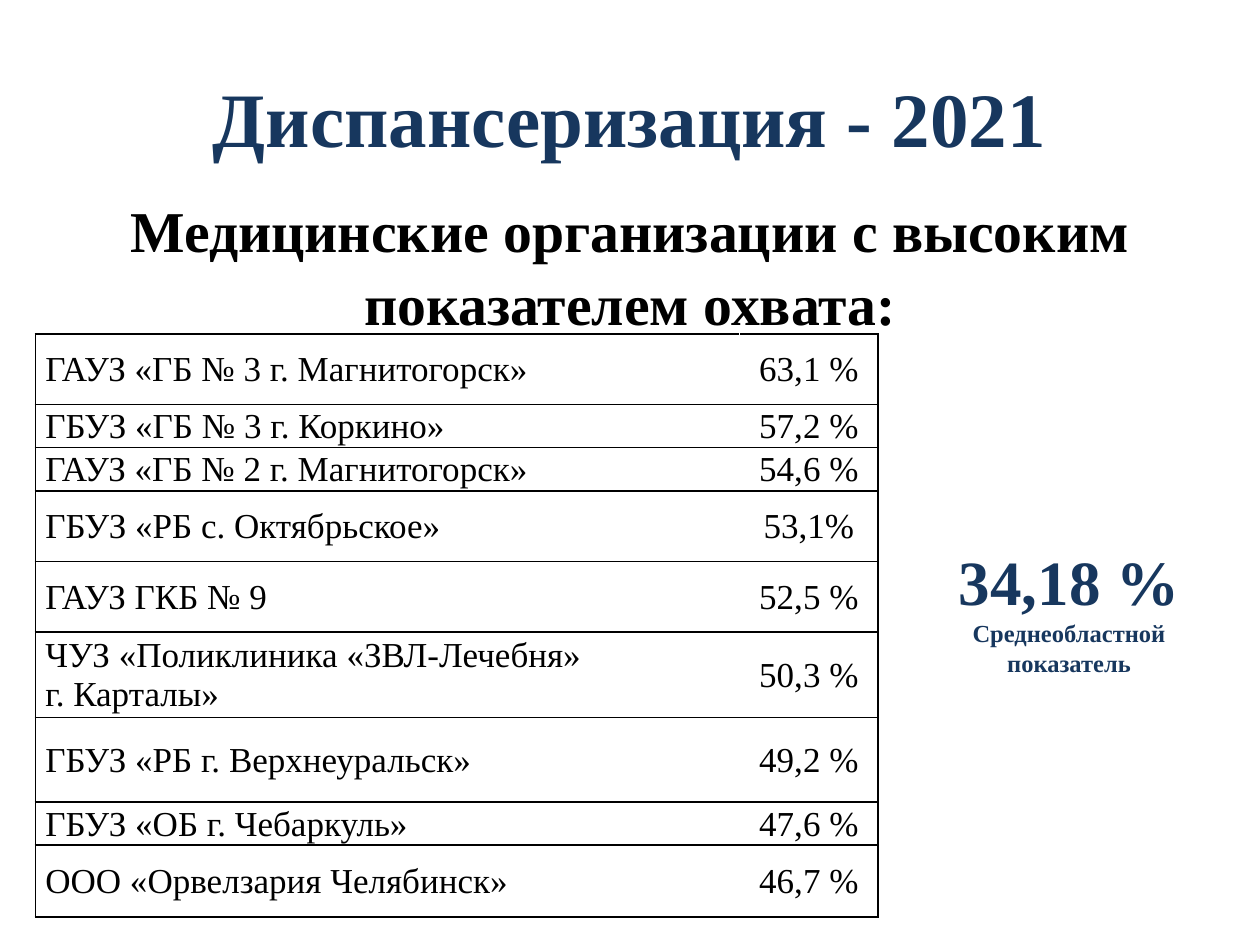
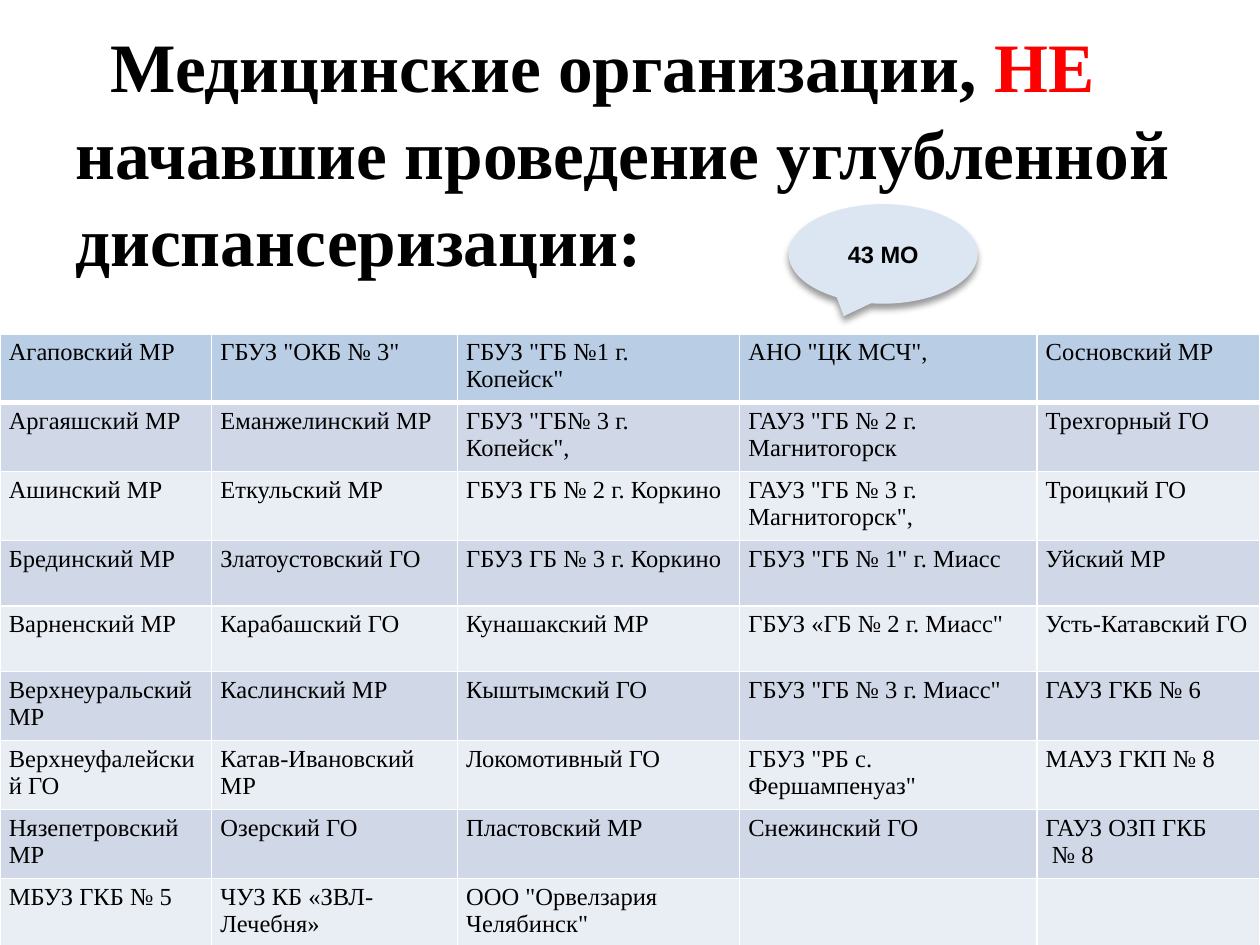
from lxml import etree
from pptx import Presentation, util as u
from pptx.dml.color import RGBColor
from pptx.enum import shapes, text
from pptx.oxml import parse_xml

WIDTH, HEIGHT = 10, 7.5
MARGIN = 0.05 * WIDTH
TABLE_TOP = 2.65
NAVY, BLACK, WHITE, RED = "17375E", "000000", "FFFFFF", "FF0000"
HEADER, BAND_DARK, BAND_LIGHT, BUBBLE = "B9CDE5", "D0D8E8", "E9EDF4", "DCE6F2"
SERIF = "Times New Roman"
CENTER, LEFT = text.PP_ALIGN.CENTER, text.PP_ALIGN.LEFT
MIDDLE, TOP = text.MSO_ANCHOR.MIDDLE, text.MSO_ANCHOR.TOP
DRAWING = "http://schemas.openxmlformats.org/drawingml/2006/main"


def write(frame, paragraphs, align=CENTER, spacing=1.0, name=SERIF, bold=True):
    """Fill a text frame; each paragraph is a list of (words, size, colour) runs."""
    frame.word_wrap = True
    for index, runs in enumerate(paragraphs):
        paragraph = frame.add_paragraph() if index else frame.paragraphs[0]
        paragraph.alignment = align
        paragraph.line_spacing = spacing
        for words, size, colour in runs:
            run = paragraph.add_run()
            run.text = words
            formats = {"name": name, "size": u.Pt(size), "bold": bold}
            for key, value in formats.items():
                setattr(run.font, key, value)
            run.font.color.rgb = RGBColor.from_string(colour)


def add_grid(slide, left, rows, widths, heights, size, cell_style):
    """Add a table; cell_style(row, column) gives alignment, cell formats, borders and fill."""
    table = slide.shapes.add_table(
        len(rows), len(widths), u.Inches(left), u.Inches(TABLE_TOP),
        u.Inches(sum(widths)), u.Inches(sum(heights))).table
    table.first_row = table.horz_banding = False
    for column, width in zip(table.columns, widths):
        column.width = u.Inches(width)
    for row, height in zip(table.rows, heights):
        row.height = u.Inches(height)
    for row, labels in enumerate(rows):
        for column, label in enumerate(labels):
            cell = table.cell(row, column)
            align, formats, borders, fill = cell_style(row, column)
            if label:
                lines = [[(line, size, BLACK)] for line in label.split("\n")]
                write(cell.text_frame, lines, align, bold=False)
            for key, value in formats.items():
                setattr(cell, key, value)
            properties = cell._tc.get_or_add_tcPr()
            for side, (colour, points) in zip("LRTB", borders):
                line = etree.SubElement(properties, f"{{{DRAWING}}}ln{side}", w=str(u.Pt(points)))
                solid = etree.SubElement(line, f"{{{DRAWING}}}solidFill")
                etree.SubElement(solid, f"{{{DRAWING}}}srgbClr", val=colour)
            if fill:
                cell.fill.solid()
                cell.fill.fore_color.rgb = RGBColor.from_string(fill)
            else:
                cell.fill.background()


presentation = Presentation()
presentation.slide_width, presentation.slide_height = u.Inches(WIDTH), u.Inches(HEIGHT)
blank = presentation.slide_layouts[6]

# Slide 1: organizations with high coverage
slide = presentation.slides.add_slide(blank)
headings = [
    (0.3, 1.25, MIDDLE, "Диспансеризация - 2021", 44, NAVY, 1.0),
    (1.47, 1.18, TOP, "Медицинские организации с высоким показателем охвата:", 33, BLACK, 1.05),
]
for top, height, anchor, words, size, colour, spacing in headings:
    box = slide.shapes.add_textbox(
        u.Inches(MARGIN), u.Inches(top), u.Inches(WIDTH - 2 * MARGIN), u.Inches(height))
    box.text_frame.vertical_anchor = anchor
    write(box.text_frame, [[(words, size, colour)]], spacing=spacing)

average = slide.shapes.add_shape(
    shapes.MSO_SHAPE.OVAL, u.Inches(6.97), u.Inches(3.81), u.Inches(3.03), u.Inches(2.06))
average.shadow.inherit = False
average.fill.background()
average.line.fill.background()
average.text_frame.vertical_anchor = MIDDLE
write(average.text_frame,
      [[("34,18 %", 36, NAVY)], [("Среднеобластной показатель", 14, NAVY)]])

coverage = [
    ("ГАУЗ «ГБ № 3 г. Магнитогорск»", "63,1 %"),
    ("ГБУЗ «ГБ № 3 г. Коркино»", "57,2 %"),
    ("ГАУЗ «ГБ № 2 г. Магнитогорск»", "54,6 %"),
    ("ГБУЗ «РБ с. Октябрьское»", "53,1%"),
    ("ГАУЗ ГКБ № 9", "52,5 %"),
    ("ЧУЗ «Поликлиника «ЗВЛ-Лечебня»\nг. Карталы»", "50,3 %"),
    ("ГБУЗ «РБ г. Верхнеуральск»", "49,2 %"),
    ("ГБУЗ «ОБ г. Чебаркуль»", "47,6 %"),
    ("ООО «Орвелзария Челябинск»", "46,7 %"),
]


def coverage_style(row, column):
    formats = {"vertical_anchor": MIDDLE, "margin_left": u.Inches(0.01 if column else 0.08),
               "margin_right": u.Inches(0.01), "margin_top": u.Inches(0.01), "margin_bottom": 0}
    sides = (WHITE, BLACK) if column else (BLACK, WHITE)
    borders = [(colour, 1) for colour in (*sides, BLACK, BLACK)]
    return CENTER if column else LEFT, formats, borders, None


add_grid(slide, 0.28, coverage, [5.59, 1.1],
         [0.56, 0.34, 0.34, 0.56, 0.56, 0.64, 0.67, 0.34, 0.57], 20, coverage_style)

# Slide 2: organizations that have not started
slide = presentation.slides.add_slide(blank)
title = slide.shapes.add_textbox(
    u.Inches(MARGIN), u.Inches(0.1), u.Inches(WIDTH - 2 * MARGIN), u.Inches(2.27))
write(title.text_frame, [[("Медицинские организации, ", 39.6, BLACK), ("НЕ", 39.6, RED),
                          (" начавшие проведение углубленной диспансеризации:", 39.6, BLACK)]],
      LEFT, 1.05)
title.text_frame.paragraphs[0]._p.get_or_add_pPr().set("indent", str(u.Inches(0.28)))

not_started = [
    ("Агаповский МР", 'ГБУЗ "ОКБ № 3"', 'ГБУЗ "ГБ №1 г. Копейск"', 'АНО "ЦК МСЧ",',
     "Сосновский МР"),
    ("Аргаяшский МР", "Еманжелинский МР", 'ГБУЗ "ГБ№ 3 г. Копейск",',
     'ГАУЗ "ГБ № 2 г. Магнитогорск', "Трехгорный ГО"),
    ("Ашинский МР", "Еткульский МР", "ГБУЗ ГБ № 2 г. Коркино",
     'ГАУЗ "ГБ № 3 г. Магнитогорск",', "Троицкий ГО"),
    ("Брединский МР", "Златоустовский ГО", "ГБУЗ ГБ № 3 г. Коркино",
     'ГБУЗ "ГБ № 1" г. Миасс', "Уйский МР"),
    ("Варненский МР", "Карабашский ГО", "Кунашакский МР", 'ГБУЗ «ГБ № 2 г. Миасс"',
     "Усть-Катавский ГО"),
    ("Верхнеуральский МР", "Каслинский МР", "Кыштымский ГО", 'ГБУЗ "ГБ № 3 г. Миасс"',
     "ГАУЗ ГКБ № 6"),
    ("Верхнеуфалейский ГО", "Катав-Ивановский МР", "Локомотивный ГО",
     'ГБУЗ "РБ с. Фершампенуаз"', "МАУЗ ГКП № 8"),
    ("Нязепетровский МР", "Озерский ГО", "Пластовский МР", "Снежинский ГО",
     "ГАУЗ ОЗП ГКБ\n № 8"),
    ("МБУЗ ГКБ № 5", "ЧУЗ КБ «ЗВЛ-Лечебня»", 'ООО "Орвелзария Челябинск"', "", ""),
]


def not_started_style(row, column):
    formats = {"margin_left": u.Inches(0.07), "margin_right": u.Inches(0.07),
               "margin_top": u.Inches(0.04), "margin_bottom": u.Inches(0.04)}
    borders = [(WHITE, points) for points in (1, 1, 3 if row == 1 else 1, 1 if row else 3)]
    fill = (BAND_LIGHT, BAND_DARK)[row % 2] if row else HEADER
    return LEFT, formats, borders, fill


add_grid(slide, 0, not_started, [1.68, 1.95, 2.24, 2.36, 1.77],
         [0.52, 0.52, 0.53, 0.52, 0.52, 0.52, 0.53, 0.52, 0.53], 14, not_started_style)

bubble = slide.shapes.add_shape(
    shapes.MSO_SHAPE.OVAL_CALLOUT, u.Inches(6.26), u.Inches(1.62), u.Inches(1.5), u.Inches(0.79))
bubble.shadow.inherit = False
bubble.fill.solid()
bubble.fill.fore_color.rgb = RGBColor.from_string(BUBBLE)
bubble.line.fill.background()
bubble.text_frame.vertical_anchor = MIDDLE
write(bubble.text_frame, [[("43 МО", 13.5, BLACK)]], name="Arial")
effects = bubble._element.spPr.find(f"{{{DRAWING}}}effectLst")
effects.append(parse_xml(
    f'<a:outerShdw xmlns:a="{DRAWING}" blurRad="{u.Pt(4)}" dist="{u.Pt(3)}" dir="5400000" '
    f'rotWithShape="0"><a:srgbClr val="{BLACK}"><a:alpha val="40000"/></a:srgbClr></a:outerShdw>'))

presentation.save("out.pptx")
